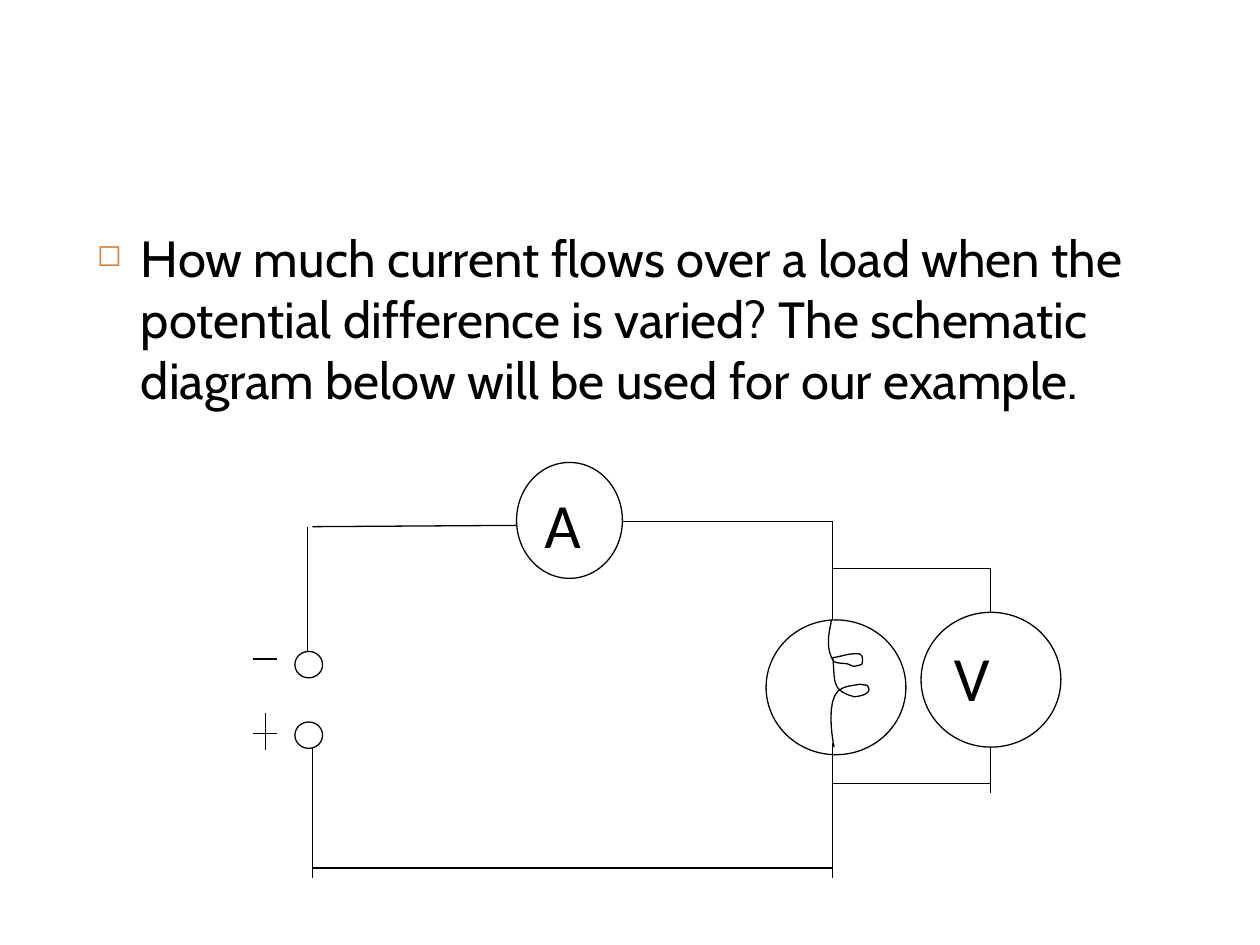
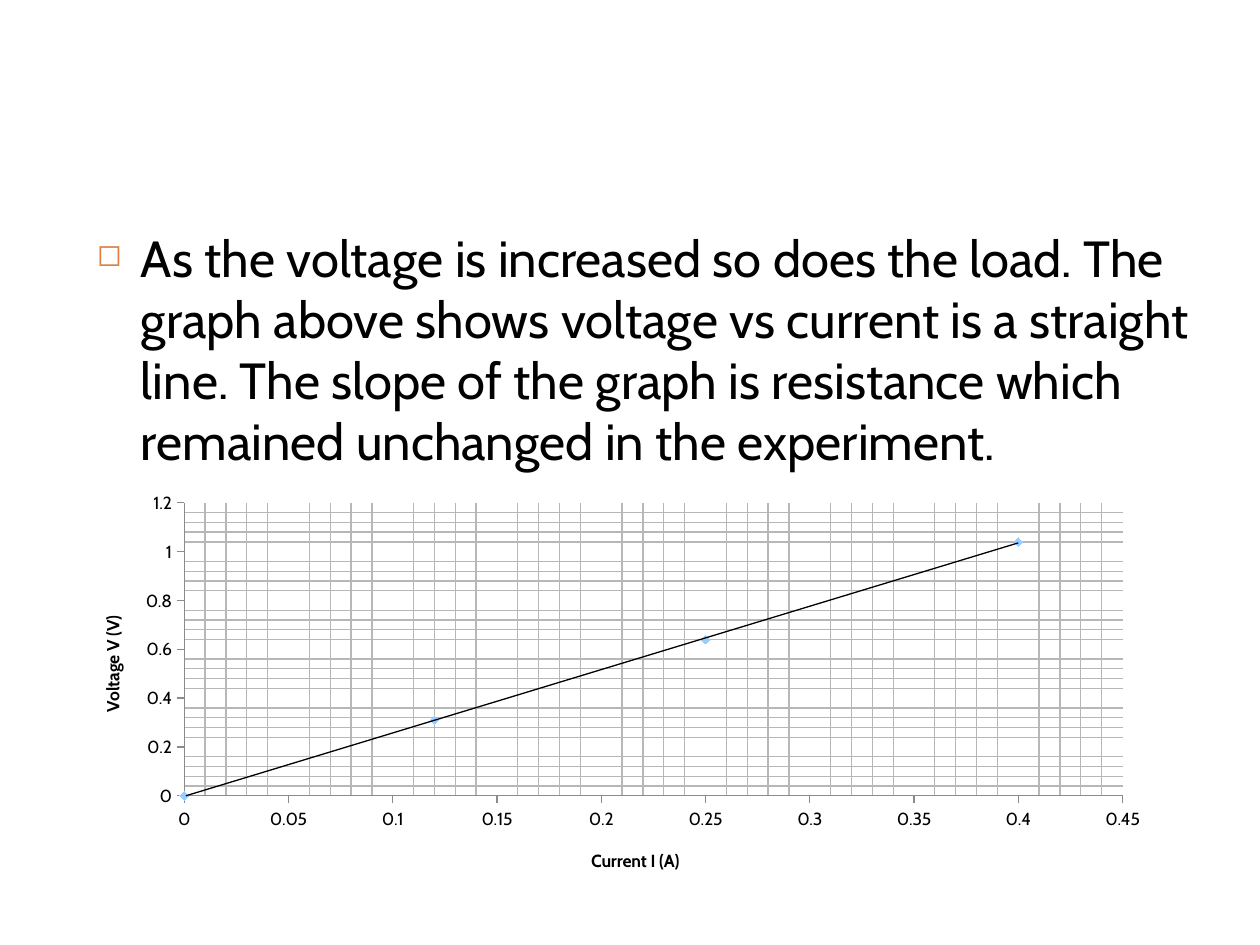
from dataclasses import dataclass

from lxml import etree
from pptx import Presentation
from pptx.chart.data import XyChartData
from pptx.dml.color import RGBColor
from pptx.enum.chart import XL_CHART_TYPE, XL_MARKER_STYLE, XL_TICK_MARK
from pptx.enum.shapes import MSO_CONNECTOR, MSO_SHAPE
from pptx.enum.text import MSO_ANCHOR, PP_ALIGN
from pptx.oxml import parse_xml
from pptx.oxml.ns import nsdecls, qn
from pptx.util import Inches, Pt

SCATTER = XL_CHART_TYPE.XY_SCATTER
DIAMOND = XL_MARKER_STYLE.DIAMOND
TICK_OUT, TICK_NONE = XL_TICK_MARK.OUTSIDE, XL_TICK_MARK.NONE
STRAIGHT, OVAL = MSO_CONNECTOR.STRAIGHT, MSO_SHAPE.OVAL
TOP, LEFT = MSO_ANCHOR.TOP, PP_ALIGN.LEFT

COLORS = {"ink": "000000", "paper": "FFFFFF", "bullet": "DD8047",
          "marker": "99CCFF", "grid": "B7B7B7", "axis": "8B8B8B"}
BODY_FONT, METER_FONT = "Cabin", "Calibri"
THIN = Pt(0.75)
CELL = 0.1  # inches per grid column and row


def rgb(name):
    return RGBColor.from_string(COLORS[name])


def apply(target, values):
    for attribute, value in values.items():
        setattr(target, attribute, value)


@dataclass
class Box:
    """An area measured in grid cells; inner points count from its corner."""
    col: float
    row: float
    cols: float
    rows: float

    def inner(self, col, row, cols, rows):
        return Box(self.col + col, self.row + row, cols, rows)

    def point(self, col, row):
        return Inches((self.col + col) * CELL), Inches((self.row + row) * CELL)

    def frame(self):
        return (*self.point(0, 0), Inches(self.cols * CELL), Inches(self.rows * CELL))


BODY_BOX = Box(6.7, 17.5, 89.2, 49.2)
CIRCUIT_BOX = Box(20.1, 36.7, 64.1, 33)
GRAPH_BOX = Box(5.1, 38.3, 86.6, 32.3)

QUESTION = ("How much current flows over a load when the potential difference is varied? "
            "The schematic diagram below will be used for our example.")
FINDING = ("As the voltage is increased so does the load. The graph above shows voltage vs "
           "current is a straight line. The slope of the graph is resistance which remained "
           "unchanged in the experiment.")

# Circuit rails: columns and rows shared by wires and parts
SOURCE, LOAD, METER = 4.7, 46, 58.5
TAP_TOP, TAP_BOTTOM, RETURN, END = 8.4, 25.5, 32.2, 33
WIRES = [
    ((LOAD, 4.7), (LOAD, 13.2)),
    ((SOURCE, 5.1), (20.9, 5)),
    ((29.2, 4.7), (LOAD, 4.7)),
    ((LOAD, TAP_TOP), (METER, TAP_TOP)),
    ((LOAD, TAP_BOTTOM), (METER, TAP_BOTTOM)),
    ((METER, TAP_TOP), (METER, 12.8)),
    ((METER, 21.8), (METER, 26.2)),
    ((LOAD, RETURN), (SOURCE, RETURN)),
    ((SOURCE, END), (SOURCE, 22.3)),
    ((4.3, 15.8), (4.3, 5.1)),
]
PLUS_MINUS = [((0, 21.5), (1.9, 21.5)), ((1, 19.9), (1, 22.8)), ((0, 15.6), (1.9, 15.6))]

# Filament: start, then cubic curves, in cells from the lamp's corner
FILAMENT_START = (5.2, 0)
FILAMENT_CURVES = [
    ((5, 1), (4.7, 2.1), (5.3, 3.2)),
    ((5.5, 3.5), (6.1, 3.4), (6.5, 3.5)),
    ((6.7, 3.6), (7, 3.7), (7, 3.7)),
    ((7.2, 3.6), (7.6, 3.6), (7.6, 3.5)),
    ((7.7, 3.2), (7.7, 2.8), (7.4, 2.7)),
    ((6.7, 2.6), (6, 2.9), (5.3, 3)),
    ((5.5, 4.8), (5.1, 5.6), (7, 6.1)),
    ((7, 6.1), (8.5, 6), (8.1, 5.3)),
    ((8, 5.1), (7.7, 5.2), (7.5, 5.1)),
    ((7, 5.2), (6.6, 5.2), (6.1, 5.4)),
    ((4.6, 5.9), (5.3, 9.6), (5.4, 10.1)),
]

READINGS = [(0, 0), (0.12, 0.31), (0.25, 0.64), (0.4, 1.04)]


def ink_line(line):
    line.color.rgb = rgb("ink")
    line.width = THIN


def add_body(slide, box, text):
    frame = slide.shapes.add_textbox(*box.frame()).text_frame
    apply(frame, {"word_wrap": True, "vertical_anchor": TOP})
    statement = frame.paragraphs[0]
    statement.space_before = Pt(7)
    run = statement.add_run()
    run.text = text
    apply(run.font, {"name": BODY_FONT, "size": Pt(29)})
    run.font.color.rgb = rgb("ink")
    properties = statement._p.get_or_add_pPr()
    properties.set("marL", str(Inches(0.35)))
    properties.set("indent", str(-Inches(0.35)))
    color = etree.SubElement(properties, qn("a:buClr"))
    etree.SubElement(color, qn("a:srgbClr"), val=COLORS["bullet"])
    etree.SubElement(properties, qn("a:buSzPct"), val="60000")
    etree.SubElement(properties, qn("a:buChar"), char="◻")


def add_wires(slide, box, wires):
    for start, end in wires:
        wire = slide.shapes.add_connector(STRAIGHT, *box.point(*start), *box.point(*end))
        ink_line(wire.line)
        etree.SubElement(wire._element.spPr, qn("a:effectLst"))


def add_circle(slide, box, letter=""):
    circle = slide.shapes.add_shape(OVAL, *box.frame())
    circle.shadow.inherit = False
    circle.fill.solid()
    circle.fill.fore_color.rgb = rgb("paper")
    ink_line(circle.line)
    if letter:
        apply(circle.text_frame, {"word_wrap": True, "vertical_anchor": TOP})
        label = circle.text_frame.paragraphs[0]
        apply(label, {"text": letter, "alignment": LEFT, "space_after": Pt(10)})
        apply(label.runs[0].font, {"name": METER_FONT, "size": Pt(36)})
        label.runs[0].font.color.rgb = rgb("ink")


def curve_points(start, curves, steps=10):
    """Points along a chain of cubic curves."""
    for first, second, end in curves:
        for step in range(1, steps + 1):
            t = step / steps
            weights = ((1 - t) ** 3, 3 * t * (1 - t) ** 2, 3 * t * t * (1 - t), t ** 3)
            yield tuple(sum(w * p[axis] for w, p in zip(weights, (start, first, second, end)))
                        for axis in (0, 1))
        start = end


def add_lamp(slide, box):
    add_circle(slide, box)
    builder = slide.shapes.build_freeform(*box.point(*FILAMENT_START))
    builder.add_line_segments(
        [box.point(*p) for p in curve_points(FILAMENT_START, FILAMENT_CURVES)], close=False)
    filament = builder.convert_to_shape()
    filament.shadow.inherit = False
    filament.fill.background()
    ink_line(filament.line)


def add_circuit(slide, box):
    add_wires(slide, box, WIRES + PLUS_MINUS)
    add_circle(slide, box.inner(20.9, 0, 8.4, 9.2), "A")
    add_circle(slide, box.inner(53, 11.9, 11.1, 10.7), "V")
    for terminal_row in (15, 20.6):
        add_circle(slide, box.inner(3.3, terminal_row, 2.2, 2.1))
    add_lamp(slide, box.inner(40.7, 12.5, 11.1, 10.7))
    add_wires(slide, box, [((LOAD, 22.3), (LOAD, END))])


def set_layout(element, **shares):
    """Pin a chart part at shares (x, y, w, h) of the chart's size."""
    layout = element.find(qn("c:layout"))
    if layout is None:
        layout = etree.Element(qn("c:layout"))
        element.insert(0, layout)
    manual = etree.SubElement(layout, qn("c:manualLayout"))
    if "w" in shares:
        etree.SubElement(manual, qn("c:layoutTarget"), val="inner")
    for side in ("x", "y"):
        etree.SubElement(manual, qn(f"c:{side}Mode"), val="edge")
    for side, share in shares.items():
        etree.SubElement(manual, qn(f"c:{side}"), val=str(share))


def line_properties(color):
    return (f'<c:spPr {nsdecls("c", "a")}><a:ln w="{THIN}"><a:solidFill>'
            f'<a:srgbClr val="{COLORS[color]}"/></a:solidFill></a:ln></c:spPr>')


def style_axis(axis, title, turn, place, scale):
    apply(axis, scale)
    apply(axis, {"minimum_scale": 0, "has_major_gridlines": False,
                 "has_minor_gridlines": True, "major_tick_mark": TICK_OUT,
                 "minor_tick_mark": TICK_NONE})
    apply(axis.tick_labels, {"number_format": "General", "number_format_is_linked": False})
    axis.format.line.color.rgb = rgb("axis")
    axis.format.line.width = THIN
    gridlines = axis._element.find(qn("c:minorGridlines"))
    gridlines.append(parse_xml(line_properties("grid")))
    heading = axis.axis_title.text_frame
    heading.text = title
    font = heading.paragraphs[0].runs[0].font
    apply(font, {"name": BODY_FONT, "size": Pt(10), "bold": True})
    font.color.rgb = rgb("ink")
    title_element = axis._element.find(qn("c:title"))
    body = title_element.xpath(".//a:bodyPr")[0]
    body.set("rot", str(turn * 60000))
    body.set("vert", "horz")
    set_layout(title_element, **place)


def add_trend_line(chart):
    trend = parse_xml(
        f'<c:trendline {nsdecls("c")}>{line_properties("ink")}'
        '<c:trendlineType val="linear"/><c:dispRSqr val="0"/><c:dispEq val="0"/>'
        '</c:trendline>')
    chart._chartSpace.xpath(".//c:xVal")[0].addprevious(trend)


def add_graph(slide, box):
    data = XyChartData()
    readings = data.add_series("Series 1")
    for current, voltage in READINGS:
        readings.add_data_point(current, voltage)
    chart = slide.shapes.add_chart(SCATTER, *box.frame(), data).chart
    apply(chart, {"has_legend": False, "has_title": False})
    apply(chart.font, {"name": BODY_FONT, "size": Pt(10)})
    chart.font.color.rgb = rgb("ink")
    chart.plots[0].vary_by_categories = False
    style_axis(chart.category_axis, "Current I (A)", 0, {"x": 0.48, "y": 0.89},
               {"maximum_scale": 0.45, "major_unit": 0.05, "minor_unit": 0.01})
    style_axis(chart.value_axis, "Voltage V (V)", -90, {"x": 0.03, "y": 0.32},
               {"maximum_scale": 1.2, "major_unit": 0.2, "minor_unit": 0.04})
    plot_area = chart._chartSpace.xpath(".//c:plotArea")[0]
    set_layout(plot_area, x=0.11, y=0.05, w=0.86, h=0.72)
    series = chart.plots[0].series[0]
    series.format.line.fill.background()
    apply(series.marker, {"style": DIAMOND, "size": 5})
    series.marker.format.fill.solid()
    series.marker.format.fill.fore_color.rgb = rgb("marker")
    series.marker.format.line.fill.background()
    add_trend_line(chart)
    for smooth in chart._chartSpace.xpath(".//c:ser/c:smooth"):
        smooth.set("val", "0")


def add_page(deck, text, add_figure, figure_box):
    slide = deck.slides.add_slide(deck.slide_layouts[6])
    slide.background.fill.solid()
    slide.background.fill.fore_color.rgb = rgb("paper")
    add_body(slide, BODY_BOX, text)
    add_figure(slide, figure_box)


def main():
    deck = Presentation()
    apply(deck, {"slide_width": Inches(10), "slide_height": Inches(7.5)})
    add_page(deck, QUESTION, add_circuit, CIRCUIT_BOX)
    add_page(deck, FINDING, add_graph, GRAPH_BOX)
    deck.save("out.pptx")


if __name__ == "__main__":
    main()
